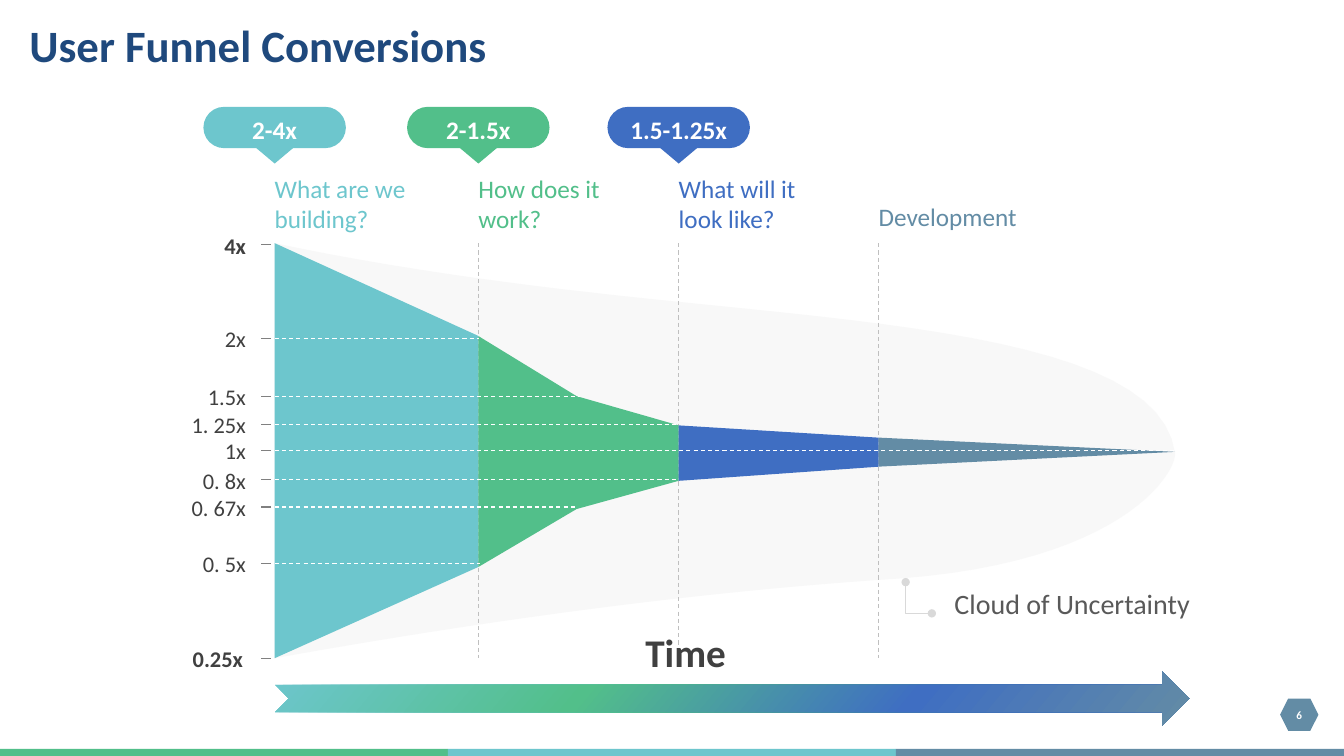
from dataclasses import dataclass

from lxml import etree
from pptx import Presentation
from pptx.dml.color import RGBColor
from pptx.enum.dml import MSO_LINE
from pptx.enum.shapes import MSO_CONNECTOR, MSO_SHAPE
from pptx.enum.text import MSO_ANCHOR, MSO_AUTO_SIZE, PP_ALIGN
from pptx.oxml.ns import qn
from pptx.util import Emu, Pt

STRAIGHT, ELBOW = MSO_CONNECTOR.STRAIGHT, MSO_CONNECTOR.ELBOW
RECT, PILL, HEXAGON = MSO_SHAPE.RECTANGLE, MSO_SHAPE.ROUNDED_RECTANGLE, MSO_SHAPE.HEXAGON
TRIANGLE, ARROW = MSO_SHAPE.ISOSCELES_TRIANGLE, MSO_SHAPE.NOTCHED_RIGHT_ARROW
TOP, MIDDLE = MSO_ANCHOR.TOP, MSO_ANCHOR.MIDDLE
LEFT, CENTER, RIGHT = PP_ALIGN.LEFT, PP_ALIGN.CENTER, PP_ALIGN.RIGHT
DASH = MSO_LINE.DASH

FONT = "Calibri"
COLORS = {
    "cyan": "6DC6CD", "green": "52BF8A", "blue": "3F6EC2", "slate": "638CA5",
    "navy": "1F497D", "cloud": "F2F2F2", "guide": "BFBFBF", "tick": "808080",
    "leader": "D9D9D9", "label": "404040", "note": "595959", "white": "FFFFFF",
}

# The slide is a grid of square cells
COLUMNS, ROWS = 160, 90
CELL = 76200
Point = tuple[float, float]


@dataclass
class Stage:
    color: str
    question: str
    first: int  # span of profile points
    last: int
    ratio: str = ""
    caption_row: float = 20.64


@dataclass
class Level:
    label: str
    row: float
    reach: float = 0  # column where the dashed line ends
    bold: bool = False
    right: float = 29.28


# Funnel outline: column, upper row, lower row
PROFILE = [
    (32.7, 28.95, 78.36), (56.95, 40, 67.5), (68.65, 47.16, 60.6),
    (80.8, 50.64, 57.24), (104.6, 52.1, 55.56), (139.9, 53.8, 53.8),
]
STAGES = [
    Stage("cyan", "What are we building?", 0, 1, "2-4x"),
    Stage("green", "How does it\nwork?", 1, 3, "2-1.5x"),
    Stage("blue", "What will it look like?", 3, 4, "1.5-1.25x"),
    Stage("slate", "Development", 4, 5, caption_row=24),
]
LEVELS = [
    Level("4x", 29.16, bold=True), Level("2x", 40.25, 57),
    Level("1.5x", 47.16, 69), Level("1. 25x", 50.52, 80.8),
    Level("1x", 53.64, 139.8), Level("0. 8x", 57.12, 80.8),
    Level("0. 67x", 60.36, 68.8), Level("0. 5x", 67.08, 57.1),
    Level("0.25x", 78.36, bold=True, right=28.92),
]
# Each curve starts where the one before ends: two controls, then the end
CLOUD_CURVES = [
    ((43.2, 31.2), (56.4, 33.24), (69.12, 34.68)),
    ((100.8, 38.4), (138, 39.36), (139.9, 54)),
    ((139.9, 56.64), (133.2, 66.96), (107.04, 68.88)),
    ((82.8, 70.44), (57.6, 73.9), (32.7, 78.36)),
]
CURVE_STEPS = 24


def cells(count: float) -> Emu:
    return Emu(round(count * CELL))


def rgb(color: str) -> RGBColor:
    return RGBColor.from_string(COLORS[color])


def write(shape, text: str, size: float, color: str, bold=False, align=LEFT,
          anchor=TOP, margins: Point = (0, 0), spacing: float = 1) -> None:
    frame = shape.text_frame
    frame.text = text
    frame.word_wrap = True
    frame.vertical_anchor = anchor
    frame.margin_left = frame.margin_right = cells(margins[0])
    frame.margin_top = frame.margin_bottom = cells(margins[1])
    for paragraph in frame.paragraphs:
        paragraph.alignment = align
        paragraph.line_spacing = spacing
        for run in paragraph.runs:
            run.font.name, run.font.size, run.font.bold = FONT, Pt(size), bold
            run.font.color.rgb = rgb(color)


def add_text(slide, left: float, top: float, width: float, height: float, text: str,
             size: float, color: str, **style):
    box = slide.shapes.add_textbox(*map(cells, (left, top, width, height)))
    write(box, text, size, color, **style)
    return box


def paint(shape, color: str) -> None:
    shape.shadow.inherit = False
    shape.fill.solid()
    shape.fill.fore_color.rgb = rgb(color)
    shape.line.fill.background()


def add_block(slide, kind, left: float, top: float, width: float, height: float, color: str):
    block = slide.shapes.add_shape(kind, *map(cells, (left, top, width, height)))
    paint(block, color)
    return block


def add_outline(slide, points: list[Point], color: str):
    corners = [(cells(x), cells(y)) for x, y in points]
    builder = slide.shapes.build_freeform(*corners[0])
    builder.add_line_segments(corners[1:], close=True)
    outline = builder.convert_to_shape()
    paint(outline, color)
    return outline


def add_line(slide, start: Point, end: Point, color: str, dash=None, kind=STRAIGHT):
    line = slide.shapes.add_connector(kind, *map(cells, start + end))
    line.line.color.rgb = rgb(color)
    line.line.width = Pt(0.75)
    if dash:
        line.line.dash_style = dash
    etree.SubElement(line._element.spPr, qn("a:effectLst"))
    return line


def curve(start: Point, first: Point, second: Point, end: Point) -> list[Point]:
    points = []
    for step in range(1, CURVE_STEPS + 1):
        t = step / CURVE_STEPS
        weights = ((1 - t) ** 3, 3 * t * (1 - t) ** 2, 3 * t * t * (1 - t), t ** 3)
        corners = (start, first, second, end)
        points.append((sum(w * c[0] for w, c in zip(weights, corners)),
                       sum(w * c[1] for w, c in zip(weights, corners))))
    return points


def add_cloud(slide) -> None:
    points = [PROFILE[0][:2]]
    for controls in CLOUD_CURVES:
        points += curve(points[-1], *controls)
    cloud = add_outline(slide, points, "cloud")
    tint = cloud._element.spPr.find(qn("a:solidFill"))[0]
    etree.SubElement(tint, qn("a:alpha"), val="50000")


def add_stage(slide, stage: Stage) -> None:
    span = PROFILE[stage.first:stage.last + 1]
    upper = [(x, y) for x, y, _ in span]
    lower = [(x, y) for x, _, y in reversed(span)]
    add_outline(slide, upper + lower, stage.color)
    edge = span[0][0]
    add_text(slide, edge, stage.caption_row, 17.76, 7.5, stage.question, 18, stage.color)
    if stage.ratio:
        pill = add_block(slide, PILL, edge - 8.48, 12.72, 16.96, 4.92, stage.color)
        pill.adjustments[0] = 0.5
        write(pill, stage.ratio, 18, "white", bold=True, align=CENTER, anchor=MIDDLE,
              margins=(0.5, 0), spacing=1.1)
        pointer = add_block(slide, TRIANGLE, edge - 2.28, 17.55, 4.56, 1.92, stage.color)
        pointer.rotation = 180


def add_level(slide, level: Level) -> None:
    if level.reach:
        add_line(slide, (PROFILE[0][0], level.row), (level.reach, level.row), "white", DASH)
    add_line(slide, (32.28, level.row), (31.08, level.row), "tick")
    add_text(slide, level.right - 12.36, level.row - 1.56, 12.36, 3.36, level.label, 16,
             "label", bold=level.bold, align=RIGHT)


def add_cloud_note(slide) -> None:
    add_text(slide, 112.44, 69.24, 30.96, 9.6, "Cloud of Uncertainty", 20, "note",
             margins=(1.2, 0.6))
    leader = add_line(slide, (111.24, 69.6), (107.52, 72.72), "leader", kind=ELBOW)
    shape_props = leader._element.spPr
    shape_props.find(qn("a:prstGeom")).set("prst", "bentConnector2")
    shape_props.find(qn("a:xfrm")).set("rot", str(270 * 60000))
    for end in ("a:headEnd", "a:tailEnd"):
        etree.SubElement(shape_props.find(qn("a:ln")), qn(end), type="oval")


def add_time_arrow(slide) -> None:
    arrow = add_block(slide, ARROW, 32.76, 79.92, 108.84, 6.48, "cyan")
    arrow.fill.gradient()
    gradient = arrow._element.spPr.find(qn("a:gradFill"))
    stops = gradient.find(qn("a:gsLst"))
    stops.clear()
    for share, stage in zip((0, 34, 69, 100), STAGES):
        stop = etree.SubElement(stops, qn("a:gs"), pos=str(share * 1000))
        etree.SubElement(stop, qn("a:srgbClr"), val=COLORS[stage.color])
    gradient.find(qn("a:lin")).set("ang", str(40 * 60000))
    time = add_text(slide, 75, 74.04, 12.6, 7.08, "Time", 28, "label", bold=True,
                    align=RIGHT, anchor=MIDDLE, margins=(1.2, 0.6))
    time.text_frame.word_wrap = False
    time.text_frame.auto_size = MSO_AUTO_SIZE.SHAPE_TO_FIT_TEXT


def main() -> None:
    deck = Presentation()
    deck.slide_width, deck.slide_height = cells(COLUMNS), cells(ROWS)
    slide = deck.slides.add_slide(deck.slide_layouts[6])

    # Footer band and page number
    third = COLUMNS / 3
    for index, color in enumerate(("green", "cyan", "slate")):
        add_block(slide, RECT, index * third, 89.15, third, 0.85, color)
    page = add_block(slide, HEXAGON, 152.4, 83.16, 4.56, 3.84, "slate")
    write(page, "6", 8, "white", bold=True, align=CENTER, anchor=MIDDLE)

    # Title
    add_text(slide, 3.5, 3.36, 153, 3.84, "User Funnel Conversions", 32, "navy",
             bold=True, anchor=MIDDLE)

    # Funnel over its cloud
    add_cloud(slide)
    for stage in STAGES[1:]:
        edge = PROFILE[stage.first][0]
        add_line(slide, (edge, 28.95), (edge, 78.36), "guide", DASH)
    for stage in STAGES:
        add_stage(slide, stage)
    for level in LEVELS:
        add_level(slide, level)

    # Note and time axis
    add_cloud_note(slide)
    add_time_arrow(slide)
    deck.save("out.pptx")


if __name__ == "__main__":
    main()
